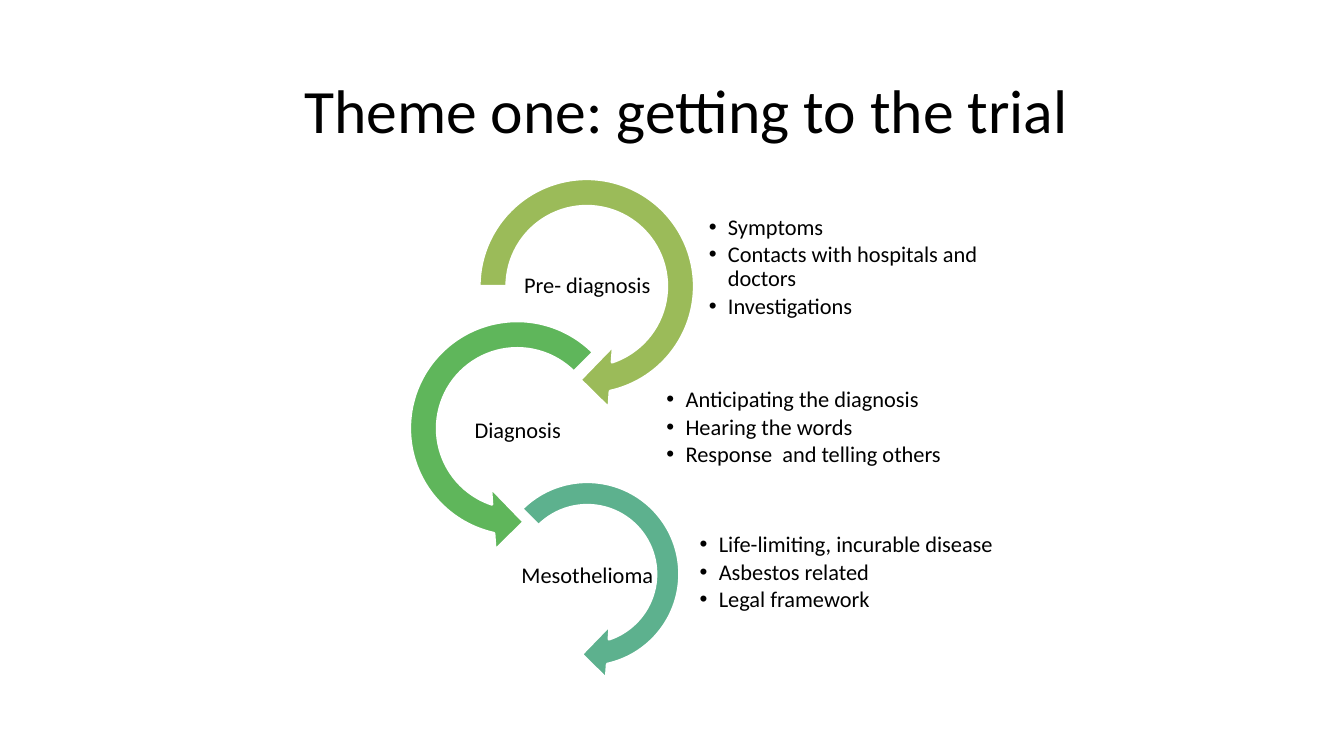
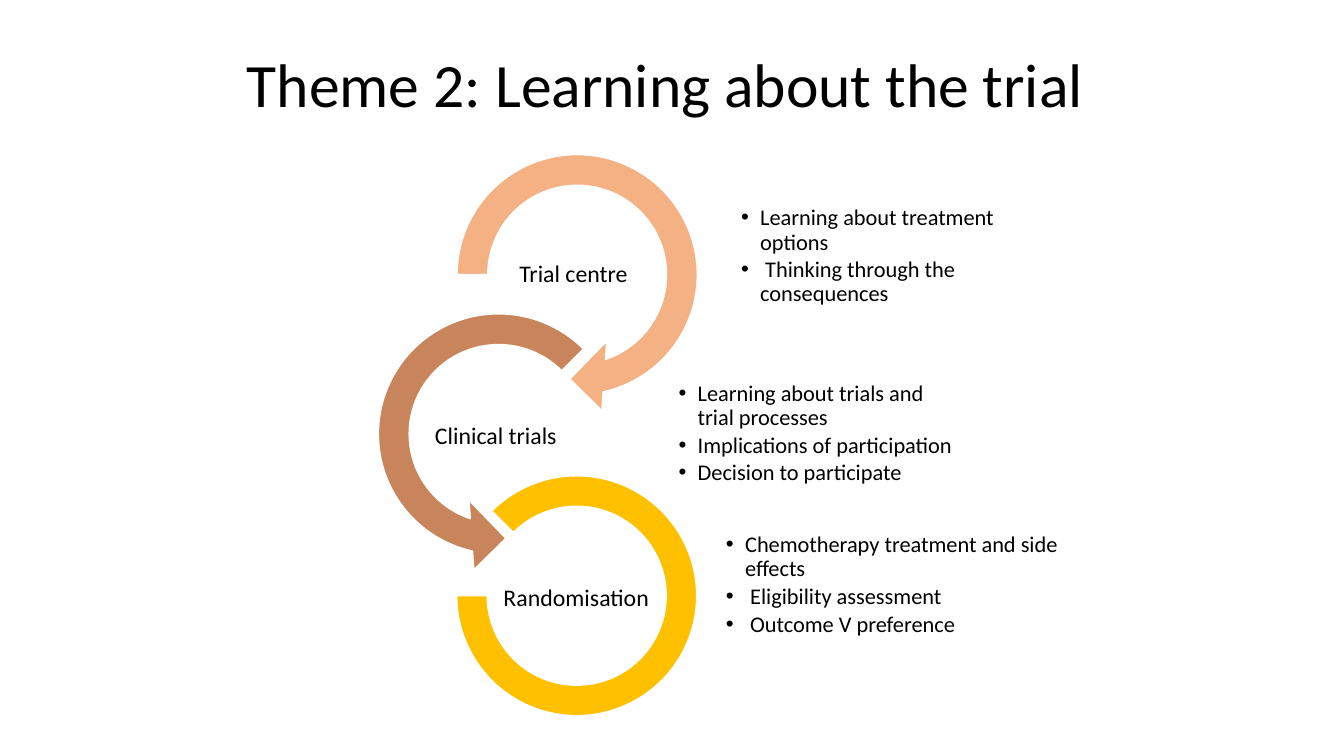
from dataclasses import dataclass

from lxml import etree
from pptx import Presentation
from pptx import util as u
from pptx.dml.color import RGBColor
from pptx.enum import shapes, text
from pptx.oxml import ns

PX = 9144
W, H = 1333, 750


@dataclass(frozen=True)
class Theme:
    """Hold the colours and type sizes of the deck."""
    font: str = "Calibri"
    ink: str = "000000"
    paper: str = "FFFFFF"
    greens: tuple = ("9BBB59", "5FB65B", "5DB18E")
    warms: tuple = ("F4B183", "C8855C", "FFC000")
    title: int = 44
    body: int = 16
    label: int = 17
    leading: float = 0.9
    gap: float = 2.4
    indent: int = 19


T = Theme()
MSO = shapes.MSO_SHAPE
RIGHT = (MSO.CIRCULAR_ARROW, (0.11, 11.42, 45, 108, 0.125))
LEFT = (MSO.LEFT_CIRCULAR_ARROW, (0.11, 11.42, 63, 189, 0.125))
TAIL = (MSO.CIRCULAR_ARROW, (0.11, 11.42, 45, 135, 0.125))
ARC = (MSO.BLOCK_ARC, (135, 108, 0.127))
RINGS = ((0.28, 0, 1), (0, 0.57, 1), (0.35, 1.22, 0.86))


def emu(*lengths):
    """Turn px lengths into EMU."""
    return [u.Emu(round(n) * PX) for n in lengths]


def rgb(colour):
    """Turn a hex string into a colour."""
    return RGBColor.from_string(colour)


def add_text(s, box, lines, size, align=text.PP_ALIGN.LEFT, inset=1, bullet=False):
    """Add a middle-anchored text box with one paragraph per line."""
    tf = s.shapes.add_textbox(*emu(*box)).text_frame
    tf.word_wrap = True
    tf.vertical_anchor = text.MSO_ANCHOR.MIDDLE
    tf.margin_left, tf.margin_right, tf.margin_top, tf.margin_bottom = emu(*[inset] * 4)
    for i, line in enumerate(lines):
        p = tf.add_paragraph() if i else tf.paragraphs[0]
        p.alignment = align
        p.line_spacing = T.leading
        r = p.add_run()
        r.text = line
        r.font.name, r.font.size = T.font, u.Pt(size)
        r.font.color.rgb = rgb(T.ink)
        if bullet:
            p.space_after = u.Pt(T.gap)
            add_bullet(p)


def add_bullet(p):
    """Give a paragraph a hanging round bullet."""
    pPr = p._p.get_or_add_pPr()
    pPr.set("marL", str(T.indent * PX))
    pPr.set("indent", str(-T.indent * PX))
    etree.SubElement(pPr, ns.qn("a:buFont")).set("typeface", "Arial")
    etree.SubElement(pPr, ns.qn("a:buChar")).set("char", "•")


def add_ring(s, box, kind, colour, line):
    """Add one curved arrow or arc."""
    preset, adjustments = kind
    sp = s.shapes.add_shape(preset, *emu(*box))
    sp.shadow.inherit = False
    for i, value in enumerate(adjustments):
        sp.adjustments[i] = value
    sp.fill.solid()
    sp.fill.fore_color.rgb = rgb(colour)
    sp.line.color.rgb = rgb(T.paper)
    sp.line.width = u.Pt(line)


def add_cycle(s, box, kinds, colours, line, size, steps):
    """Place three linked rings with labels and bullets from the box corner."""
    x, y, d = box
    for i, (label, (bx, by, bw, bh), bullets) in enumerate(steps):
        dx, dy, scale = RINGS[i]
        add_ring(s, (x + dx * d, y + dy * d, scale * d, scale * d),
                 kinds[i], colours[i], line)
        label_x = x + (0.22 if i == 1 else 0.5) * d
        label_y = y + (0.36 + 0.58 * i) * d
        add_text(s, (label_x, label_y, 0.56 * d, 0.28 * d), [label], size,
                 text.PP_ALIGN.CENTER)
        add_text(s, (x + bx, y + by, bw, bh), bullets, T.body, bullet=True)


def add_theme_slide(prs, title, title_box, **cycle):
    """Add a slide with a title and a cycle diagram."""
    s = prs.slides.add_slide(prs.slide_layouts[6])
    add_text(s, title_box, [title], T.title, inset=10)
    add_cycle(s, **cycle)


def main():
    """Build and save the deck."""
    prs = Presentation()
    prs.slide_width, prs.slide_height = emu(W, H)
    add_theme_slide(
        prs, "Theme one: getting to the trial", (292, 40, 950, 145),
        box=(389, 160, 248), kinds=(RIGHT, LEFT, TAIL), colours=T.greens,
        line=2, size=T.body, steps=(
            ("Pre- diagnosis", (313, 56, 329, 99),
             ("Symptoms", "Contacts with hospitals and doctors", "Investigations")),
            ("Diagnosis", (271, 215, 295, 99),
             ("Anticipating the diagnosis", "Hearing the words",
              "Response  and telling others")),
            ("Mesothelioma", (304, 355, 303, 107),
             ("Life-limiting, incurable disease", "Asbestos related",
              "Legal framework"))))
    add_theme_slide(
        prs, "Theme 2: Learning about the trial", (235, 40, 862, 94),
        box=(356, 134, 277), kinds=(RIGHT, LEFT, ARC), colours=T.warms,
        line=1, size=T.label, steps=(
            ("Trial centre ", (378, 65, 253, 111),
             ("Learning about treatment options",
              " Thinking through the consequences")),
            ("Clinical trials ", (316, 241, 275, 111),
             ("Learning about trials and trial processes",
              "Implications of participation", "Decision to participate")),
            ("Randomisation", (363, 391, 368, 111),
             ("Chemotherapy treatment and side effects",
              " Eligibility assessment", " Outcome V preference"))))
    prs.save("out.pptx")


if __name__ == "__main__":
    main()
